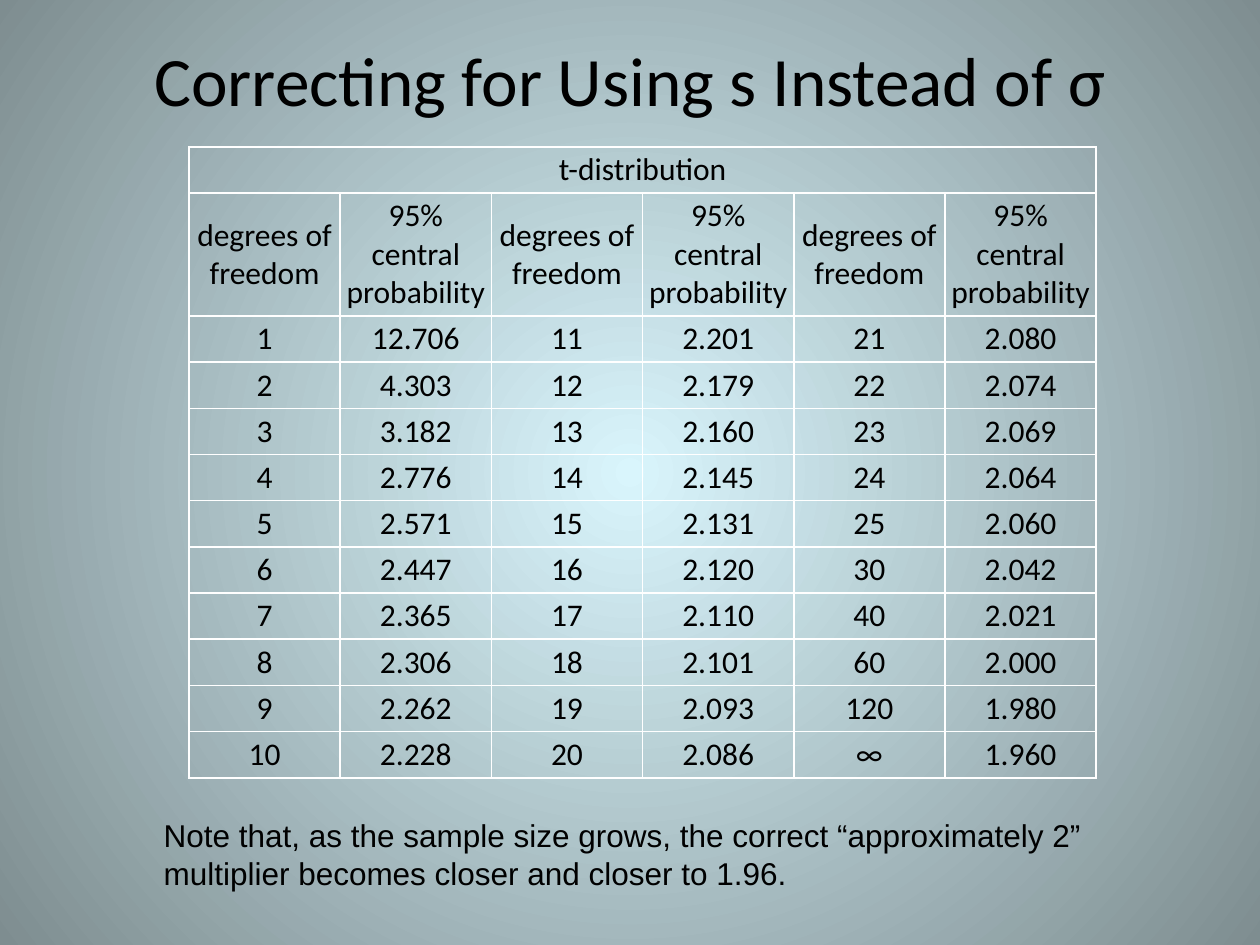
from lxml.etree import SubElement
from pptx import Presentation
from pptx.dml.color import RGBColor
from pptx.enum.text import MSO_ANCHOR as Anchor, MSO_AUTO_SIZE as AutoSize, PP_ALIGN as Align
from pptx.oxml.ns import qn
from pptx.util import Pt

BLACK = RGBColor(0x00, 0x00, 0x00)
GLOW = RGBColor(0xD9, 0xF5, 0xFC)
SLATE = RGBColor(0x7E, 0x8D, 0x90)

COLUMN_WIDTH = 86.4
BANNER_HEIGHT, HEADER_HEIGHT, VALUE_HEIGHT = 20, 69.5, 26.4
CELL_INSET = 2.16

HEADINGS = ["degrees of freedom", "95% central probability"]
# Each block fills one pair of columns: degrees of freedom and t multipliers
BLOCKS = [
    (range(1, 11),
     "12.706 4.303 3.182 2.776 2.571 2.447 2.365 2.306 2.262 2.228"),
    (range(11, 21),
     "2.201 2.179 2.160 2.145 2.131 2.120 2.110 2.101 2.093 2.086"),
    ([21, 22, 23, 24, 25, 30, 40, 60, 120, "∞"],
     "2.080 2.074 2.069 2.064 2.060 2.042 2.021 2.000 1.980 1.960"),
]


def write(frame, text, size, font, align):
    """Put one formatted run into a text frame."""
    paragraph = frame.paragraphs[0]
    paragraph.alignment = align
    run = paragraph.add_run()
    run.text = text
    run.font.size = Pt(size)
    run.font.name = font
    run.font.color.rgb = BLACK


def paint_background(slide):
    """Radial gradient, light at the centre."""
    fill = slide.background.fill
    fill.gradient()
    for stop, colour, position in zip(fill.gradient_stops, (GLOW, SLATE), (0, 1)):
        stop.color.rgb = colour
        stop.position = position
    gradient = slide.element.find(".//" + qn("a:gradFill"))
    gradient.remove(gradient.find(qn("a:lin")))
    circle = SubElement(gradient, qn("a:path"))
    circle.set("path", "circle")
    centre = SubElement(circle, qn("a:fillToRect"))
    for side in "ltrb":
        centre.set(side, "50000")


def add_title(slide, text):
    title = slide.shapes.title
    title.left, title.top, title.width, title.height = Pt(36), Pt(18), Pt(648), Pt(54)
    title.text_frame.auto_size = AutoSize.NONE
    title.text_frame.vertical_anchor = Anchor.MIDDLE
    write(title.text_frame, text, 39.6, "Calibri", Align.CENTER)


def fill_cell(cell, text):
    cell.fill.background()
    cell.vertical_anchor = Anchor.MIDDLE
    cell.margin_left = cell.margin_right = Pt(CELL_INSET)
    cell.margin_top = cell.margin_bottom = Pt(CELL_INSET)
    write(cell.text_frame, text, 18, "Calibri", Align.CENTER)


def add_t_table(slide):
    columns = []
    for degrees, multipliers in BLOCKS:
        columns += [[str(degree) for degree in degrees], multipliers.split()]
    body = [HEADINGS * len(BLOCKS), *zip(*columns)]
    heights = [BANNER_HEIGHT, HEADER_HEIGHT] + [VALUE_HEIGHT] * (len(body) - 1)

    table = slide.shapes.add_table(
        len(heights), len(columns), Pt(108), Pt(84),
        Pt(COLUMN_WIDTH * len(columns)), Pt(sum(heights))).table
    table.first_row = table.horz_banding = False
    for column in table.columns:
        column.width = Pt(COLUMN_WIDTH)
    for row, height in zip(table.rows, heights):
        row.height = Pt(height)

    # Banner across all columns
    banner = table.cell(0, 0)
    banner.merge(table.cell(0, len(columns) - 1))
    for cell in table.rows[0].cells:
        cell.fill.background()
    fill_cell(banner, "t-distribution")

    # Headings and values
    for row_index, texts in enumerate(body, start=1):
        for column_index, text in enumerate(texts):
            fill_cell(table.cell(row_index, column_index), text)


def add_note(slide, text):
    note = slide.shapes.add_textbox(Pt(86.4), Pt(462.25), Pt(603.4), Pt(51))
    frame = note.text_frame
    frame.word_wrap = True
    frame.auto_size = AutoSize.SHAPE_TO_FIT_TEXT
    frame.vertical_anchor = Anchor.MIDDLE
    write(frame, text, 18, "Arial", Align.LEFT)


def main():
    deck = Presentation()
    deck.slide_width, deck.slide_height = Pt(720), Pt(540)
    slide = deck.slides.add_slide(deck.slide_layouts[5])
    paint_background(slide)
    add_title(slide, "Correcting for Using s Instead of σ")
    add_t_table(slide)
    add_note(slide, "Note that, as the sample size grows, the correct “approximately 2” "
                    "multiplier becomes closer and closer to 1.96.")
    deck.save("out.pptx")


if __name__ == "__main__":
    main()
